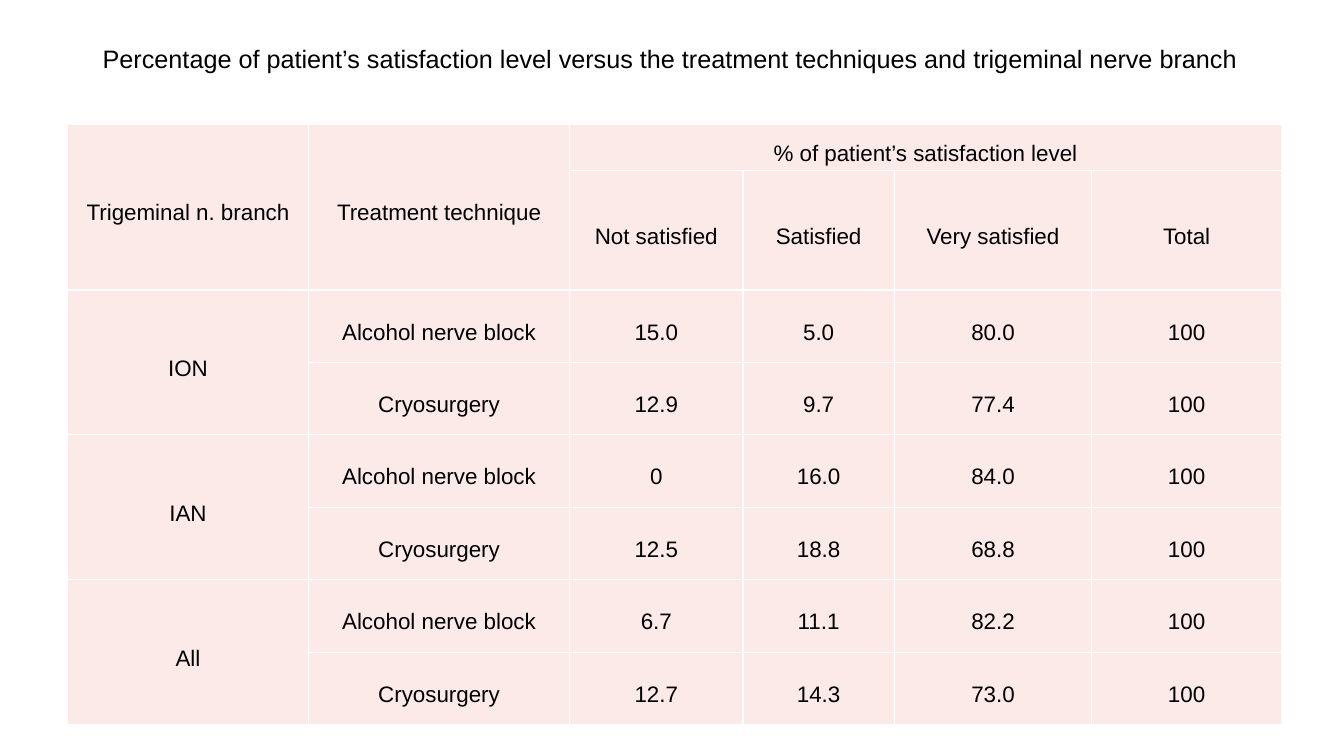
from pptx import Presentation
from pptx.dml.color import RGBColor
from pptx.enum.text import MSO_ANCHOR, MSO_AUTO_SIZE, PP_ALIGN
from pptx.oxml import parse_xml
from pptx.oxml.ns import nsdecls
from pptx.util import Inches, Pt

BLACK = RGBColor(0x00, 0x00, 0x00)
WHITE = RGBColor(0xFF, 0xFF, 0xFF)
PINK = RGBColor(0xFC, 0xEA, 0xE9)

WIDTHS = [2.39, 2.59, 1.72, 1.5, 1.96, 1.88]
HEIGHTS = [0.46, 1.19] + [0.72] * 6
LEVELS = ["Not satisfied", "Satisfied", "Very satisfied", "Total"]
METHODS = ["Alcohol nerve block", "Cryosurgery"]
RESULTS = {
    "ION": [["15.0", "5.0", "80.0", "100"], ["12.9", "9.7", "77.4", "100"]],
    "IAN": [["0", "16.0", "84.0", "100"], ["12.5", "18.8", "68.8", "100"]],
    "All": [["6.7", "11.1", "82.2", "100"], ["12.7", "14.3", "73.0", "100"]],
}
CELL = {
    "vertical_anchor": MSO_ANCHOR.MIDDLE,
    "margin_left": Inches(0.01),
    "margin_right": Inches(0.01),
    "margin_top": 0,
    "margin_bottom": 0,
}
CENTRED = {"alignment": PP_ALIGN.CENTER, "line_spacing": 1.5}


def apply(item, values):
    for name, value in values.items():
        setattr(item, name, value)


def write(para, text, size):
    run = para.add_run()
    run.text = text
    apply(run.font, {"name": "Arial", "size": Pt(size)})
    run.font.color.rgb = BLACK


def add_borders(cell):
    props = cell._tc.get_or_add_tcPr()
    for side in ("lnL", "lnR", "lnT", "lnB"):
        props.append(parse_xml(
            f'<a:{side} {nsdecls("a")} w="{Pt(1)}"><a:solidFill>'
            f'<a:srgbClr val="{WHITE}"/></a:solidFill></a:{side}>'))


def style_cell(cell, text):
    apply(cell, CELL)
    add_borders(cell)
    cell.fill.solid()
    cell.fill.fore_color.rgb = PINK
    para = cell.text_frame.paragraphs[0]
    apply(para, CENTRED)
    if text:
        write(para, text, 16)


def list_rows():
    rows = [
        ["Trigeminal n. branch", "Treatment technique",
         "% of patient’s satisfaction level", "", "", ""],
        ["", "", *LEVELS],
    ]
    for branch, scores in RESULTS.items():
        for label, method, score in zip([branch, ""], METHODS, scores):
            rows.append([label, method, *score])
    return rows


def add_title(slide, left, top, width, height):
    box = slide.shapes.add_textbox(
        Inches(left), Inches(top), Inches(width), Inches(height))
    frame = box.text_frame
    apply(frame, {"word_wrap": True, "auto_size": MSO_AUTO_SIZE.SHAPE_TO_FIT_TEXT})
    write(frame.paragraphs[0],
          "Percentage of patient’s satisfaction level versus "
          "the treatment techniques and trigeminal nerve branch", 18)


def add_results(slide, left, top, width, height):
    rows = list_rows()
    table = slide.shapes.add_table(
        len(rows), len(WIDTHS), Inches(left), Inches(top),
        Inches(width), Inches(height)).table
    apply(table, {"first_row": False, "horz_banding": False})
    for column, share in zip(table.columns, WIDTHS):
        column.width = Inches(width * share / sum(WIDTHS))
    for row, share in zip(table.rows, HEIGHTS):
        row.height = Inches(height * share / sum(HEIGHTS))
    for r, texts in enumerate(rows):
        for c, text in enumerate(texts):
            style_cell(table.cell(r, c), text)
    table.cell(0, 1).merge(table.cell(1, 1))
    table.cell(0, 2).merge(table.cell(0, 5))
    for r in range(0, len(rows), 2):
        table.cell(r, 0).merge(table.cell(r + 1, 0))


def main():
    deck = Presentation()
    apply(deck, {"slide_width": Inches(13.33), "slide_height": Inches(7.5)})
    slide = deck.slides.add_slide(deck.slide_layouts[6])
    add_results(slide, 0.67, 1.23, 12.04, 5.96)
    add_title(slide, 0.92, 0.38, 11.68, 0.4)
    deck.save("out.pptx")


if __name__ == "__main__":
    main()
